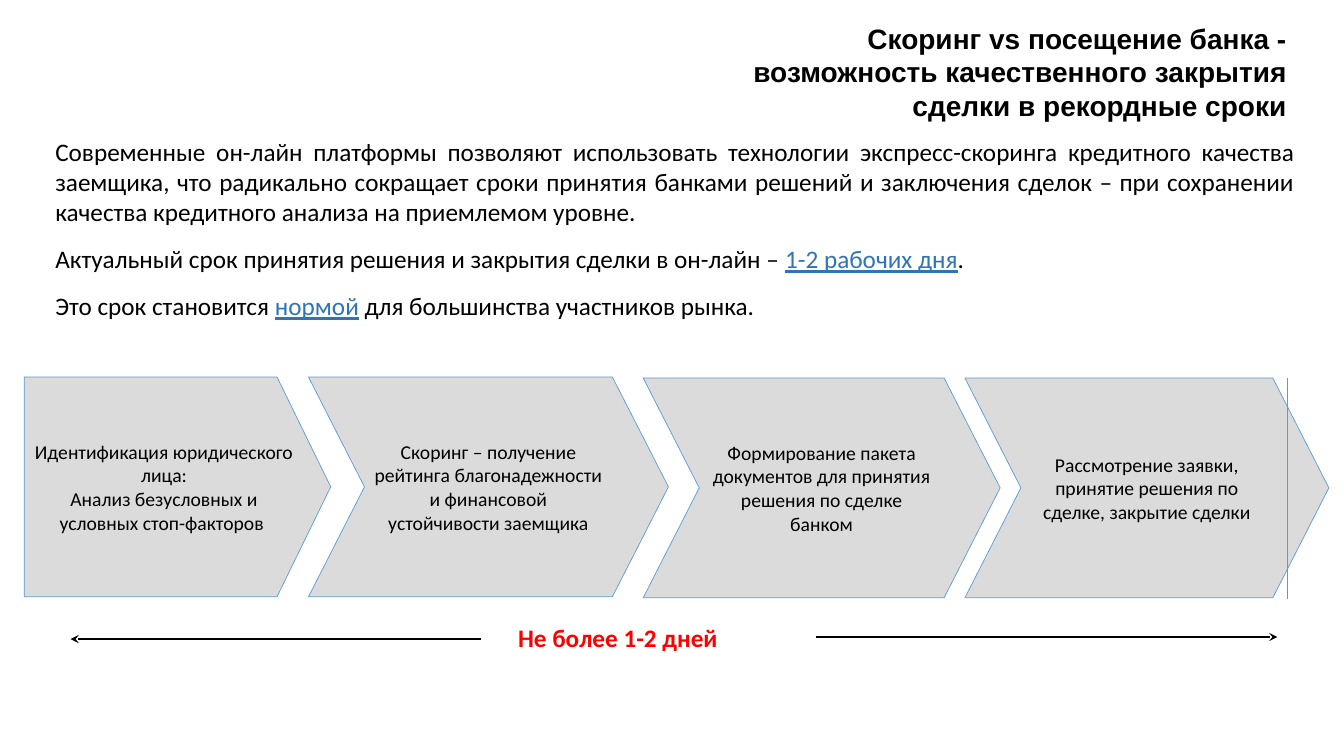
import pptx
import pptx.util
import pptx.dml.color
import pptx.enum.dml
import pptx.enum.shapes
import pptx.enum.text
import pptx.oxml
import pptx.oxml.ns
import lxml.etree

PX = 9144
COLORS = {
    "text": "000000",
    "accent": "2E75B6",
    "alert": "FF0000",
    "step": "DBDBDB",
    "outline": "5B9BD5",
}
ALIGN = pptx.enum.text.PP_ALIGN
ANCHOR = pptx.enum.text.MSO_ANCHOR
SHAPES = pptx.enum.shapes.MSO_SHAPE
TITLE_FONT = {"name": "Arial", "size": pptx.util.Pt(20), "bold": True}
BODY_FONT = {"name": "Calibri", "size": pptx.util.Pt(18)}
STEP_FONT = {"name": "Calibri", "size": pptx.util.Pt(14)}
LABEL_FONT = {**BODY_FONT, "bold": True}

TITLE = [
    [("Скоринг vs посещение банка - ", "text")],
    [("возможность качественного закрытия ", "text")],
    [("сделки в рекордные сроки ", "text")],
]
BODY = [
    [("Современные он-лайн платформы позволяют использовать технологии "
      "экспресс-скоринга кредитного качества заемщика, что радикально сокращает "
      "сроки принятия банками решений и заключения сделок – при сохранении "
      "качества кредитного анализа на приемлемом уровне.", "text")],
    [("Актуальный срок принятия решения и закрытия сделки в он-лайн – ", "text"),
     ("1-2 рабочих дня", "accent"), (".", "text")],
    [("Это срок становится ", "text"), ("нормой", "accent"),
     (" для большинства участников рынка. ", "text")],
]
STEPS = [
    (SHAPES.PENTAGON, 0, 0, 304, 0.244,
     ["Идентификация юридического лица:",
      "Анализ безусловных и условных стоп-факторов "]),
    (SHAPES.CHEVRON, 282, 0, 357, 0.255,
     ["Скоринг – получение рейтинга благонадежности и финансовой "
      "устойчивости заемщика"]),
    (SHAPES.CHEVRON, 614, 1, 354, 0.255,
     ["Формирование пакета документов для принятия решения по сделке банком"]),
    (SHAPES.CHEVRON, 933, 1, 361, 0.255,
     ["Рассмотрение заявки, принятие решения по сделке, закрытие сделки"]),
]


def px(*lengths):
    return [pptx.util.Emu(length * PX) for length in lengths]


def color(name):
    return pptx.dml.color.RGBColor.from_string(COLORS[name])


def apply(target, values):
    for name, value in values.items():
        setattr(target, name, value)


def write(shape, paragraphs, font, align, anchor=ANCHOR.TOP, space=0):
    frame = shape.text_frame
    apply(frame, {"word_wrap": True, "vertical_anchor": anchor})
    for index, runs in enumerate(paragraphs):
        paragraph = frame.add_paragraph() if index else frame.paragraphs[0]
        apply(paragraph, {"alignment": align, "space_before": pptx.util.Pt(space)})
        for text, color_name in runs:
            run = paragraph.add_run()
            run.text = text
            apply(run.font, font)
            run.font.color.rgb = color(color_name)
            if color_name == "accent":
                run.font.underline = True


def add_line(slide, start, end, color_name, width, arrow=False):
    line = slide.shapes.add_connector(
        pptx.enum.shapes.MSO_CONNECTOR.STRAIGHT, *px(*start, *end))
    line.line.color.rgb = color(color_name)
    line.line.width = pptx.util.Pt(width)
    properties = line.element.spPr
    if arrow:
        lxml.etree.SubElement(
            properties.find(pptx.oxml.ns.qn("a:ln")),
            pptx.oxml.ns.qn("a:tailEnd"), type="stealth")
    lxml.etree.SubElement(properties, pptx.oxml.ns.qn("a:effectLst"))


def add_title(slide, box):
    title = slide.shapes.title
    apply(title, dict(zip(("left", "top", "width", "height"), px(*box))))
    write(title, TITLE, TITLE_FONT, ALIGN.RIGHT)
    title.text_frame.auto_size = pptx.enum.text.MSO_AUTO_SIZE.SHAPE_TO_FIT_TEXT


def add_text(slide, box, paragraphs, font):
    shape = slide.shapes.add_textbox(*px(*box))
    write(shape, paragraphs, font, ALIGN.JUSTIFY, space=12)


def add_steps(slide, box):
    left, top, width, height = box
    for kind, offset, drop, step_width, point, lines in STEPS:
        shape = slide.shapes.add_shape(
            kind, *px(left + offset, top + drop, step_width, height))
        shape.adjustments[0] = point
        shape.shadow.inherit = False
        shape.fill.solid()
        shape.fill.fore_color.rgb = color("step")
        shape.line.color.rgb = color("outline")
        shape.line.width = pptx.util.Pt(0.5)
        write(shape, [[(line, "text")] for line in lines], STEP_FONT,
              ALIGN.CENTER, ANCHOR.MIDDLE)
    edge = left + width - 41
    add_line(slide, (edge, top + 1), (edge, top + height + 2), "outline", 0.75)


def add_duration(slide, box):
    left, top, width, height = box
    right = left + width
    add_line(slide, (right - 458, top + 20), (right, top + 20), "text", 1, True)
    add_text(slide, (left + 434, top, 316, height),
             [[("Не более 1-2 дней", "alert")]], LABEL_FONT)
    add_line(slide, (left + 407, top + 22), (left, top + 22), "text", 1, True)


def main():
    presentation = pptx.Presentation()
    apply(presentation, dict(zip(("slide_width", "slide_height"), px(1333, 750))))
    slide = presentation.slides.add_slide(presentation.slide_layouts[5])
    add_title(slide, (226, 16, 1068, 111))
    add_text(slide, (45, 130, 1249, 195), BODY, BODY_FONT)
    add_steps(slide, (24, 374, 1294, 218))
    add_duration(slide, (70, 612, 1197, 40))
    presentation.save("out.pptx")


if __name__ == "__main__":
    main()
